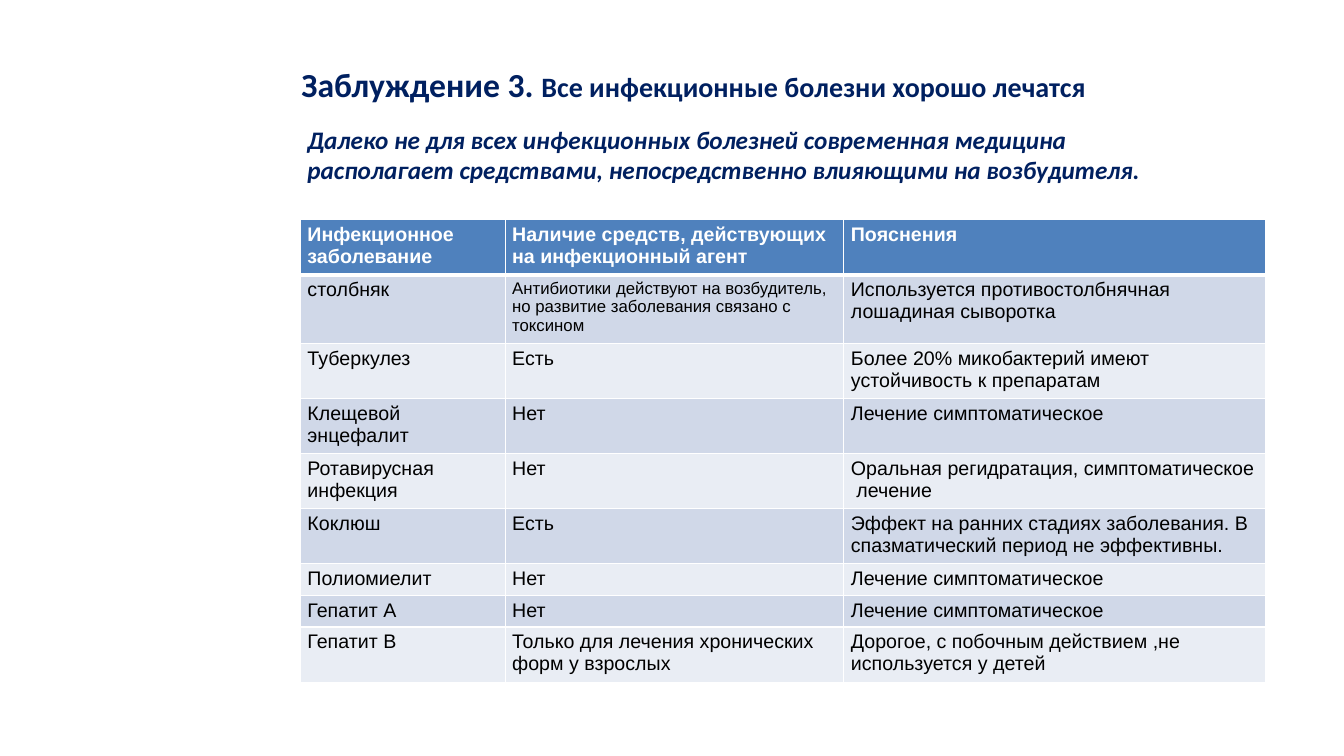
from dataclasses import dataclass

from lxml import etree
from pptx import Presentation
from pptx.dml.color import RGBColor
from pptx.enum.text import MSO_ANCHOR, MSO_AUTO_SIZE, PP_ALIGN
from pptx.oxml.ns import qn
from pptx.slide import Slide
from pptx.table import _Cell
from pptx.util import Inches, Pt

LEFT = PP_ALIGN.LEFT
MIDDLE = MSO_ANCHOR.MIDDLE
NO_AUTOFIT = MSO_AUTO_SIZE.NONE

COLORS = {
    "navy": "002060",
    "header": "4F81BD",
    "odd_row": "D0D8E8",
    "even_row": "E9EDF4",
    "white": "FFFFFF",
    "black": "000000",
}
COLUMN_WIDTHS = [2.03, 3.36, 4.18]


@dataclass
class DiseaseRow:
    disease: str
    remedy: str
    explanation: str
    height: float = 0.54
    remedy_size: int = 14


ROWS = [
    DiseaseRow("Инфекционное\nзаболевание", "Наличие средств, действующих на инфекционный агент", "Пояснения"),
    DiseaseRow(
        "столбняк",
        "Антибиотики действуют на возбудитель, но развитие заболевания связано с токсином",
        "Используется противостолбнячная лошадиная сыворотка",
        height=0.68,
        remedy_size=12,
    ),
    DiseaseRow("Туберкулез", "Есть", "Более 20% микобактерий имеют устойчивость к препаратам"),
    DiseaseRow("Клещевой энцефалит", "Нет", "Лечение симптоматическое"),
    DiseaseRow("Ротавирусная инфекция", "Нет", "Оральная регидратация, симптоматическое\n лечение"),
    DiseaseRow("Коклюш", "Есть", "Эффект на ранних стадиях заболевания. В спазматический период не эффективны."),
    DiseaseRow("Полиомиелит", "Нет", "Лечение симптоматическое", height=0.31),
    DiseaseRow("Гепатит А", "Нет", "Лечение симптоматическое", height=0.31),
    DiseaseRow(
        "Гепатит В",
        "Только для лечения хронических форм у взрослых",
        "Дорогое, с побочным действием ,не используется у детей",
    ),
]


def color(name: str) -> RGBColor:
    return RGBColor.from_string(COLORS[name])


def add_borders(cell: _Cell, top: int, bottom: int) -> None:
    properties = cell._tc.get_or_add_tcPr()
    for side, width in (("L", 1), ("R", 1), ("T", top), ("B", bottom)):
        line = etree.SubElement(properties, qn(f"a:ln{side}"), w=str(Pt(width)))
        fill = etree.SubElement(line, qn("a:solidFill"))
        etree.SubElement(fill, qn("a:srgbClr"), val=COLORS["white"])


def format_cell(cell: _Cell, text: str, size: int, row_number: int) -> None:
    is_header = row_number == 0
    cell.text = text
    cell.margin_left = cell.margin_right = Inches(0.07)
    cell.margin_top = cell.margin_bottom = Inches(0.04)
    add_borders(cell, 3 if row_number == 1 else 1, 3 if is_header else 1)
    cell.fill.solid()
    band = "odd_row" if row_number % 2 else "even_row"
    cell.fill.fore_color.rgb = color("header" if is_header else band)
    for paragraph in cell.text_frame.paragraphs:
        paragraph.font.name = "Arial"
        paragraph.font.size = Pt(size)
        paragraph.font.bold = is_header
        paragraph.font.color.rgb = color("white" if is_header else "black")


def add_title(slide: Slide) -> None:
    title = slide.shapes.title
    title.left, title.top = Inches(2.89), Inches(0.21)
    title.width, title.height = Inches(10.1), Inches(1.25)
    frame = title.text_frame
    frame.auto_size = NO_AUTOFIT
    frame.vertical_anchor = MIDDLE
    paragraph = frame.paragraphs[0]
    paragraph.alignment = LEFT
    paragraph.font.name = "Calibri"
    paragraph.font.bold = True
    paragraph.font.color.rgb = color("navy")
    for text, size in (("Заблуждение 3. ", 24), ("Все инфекционные болезни хорошо лечатся", 20)):
        run = paragraph.add_run()
        run.text = text
        run.font.size = Pt(size)


def add_summary(slide: Slide) -> None:
    summary = slide.shapes.add_textbox(Inches(2.95), Inches(1.18), Inches(8.92), Inches(0.71))
    frame = summary.text_frame
    frame.word_wrap = True
    paragraph = frame.paragraphs[0]
    paragraph.text = (
        "Далеко не для всех инфекционных болезней современная медицина "
        "располагает средствами, непосредственно влияющими на возбудителя."
    )
    paragraph.font.name = "Calibri"
    paragraph.font.size = Pt(18)
    paragraph.font.bold = True
    paragraph.font.italic = True
    paragraph.font.color.rgb = color("navy")


def add_disease_table(slide: Slide) -> None:
    table = slide.shapes.add_table(
        len(ROWS), len(COLUMN_WIDTHS), Inches(2.98), Inches(2.18),
        Inches(sum(COLUMN_WIDTHS)), Inches(sum(row.height for row in ROWS)),
    ).table
    table.horz_banding = False
    for column, width in zip(table.columns, COLUMN_WIDTHS):
        column.width = Inches(width)
    for row_number, row in enumerate(ROWS):
        table.rows[row_number].height = Inches(row.height)
        contents = ((row.disease, 14), (row.remedy, row.remedy_size), (row.explanation, 14))
        for column_number, (text, size) in enumerate(contents):
            format_cell(table.cell(row_number, column_number), text, size, row_number)


def main() -> None:
    presentation = Presentation()
    presentation.slide_width = Inches(13.33)
    presentation.slide_height = Inches(7.5)
    slide = presentation.slides.add_slide(presentation.slide_layouts[5])
    add_title(slide)
    add_summary(slide)
    add_disease_table(slide)
    presentation.save("out.pptx")


if __name__ == "__main__":
    main()
